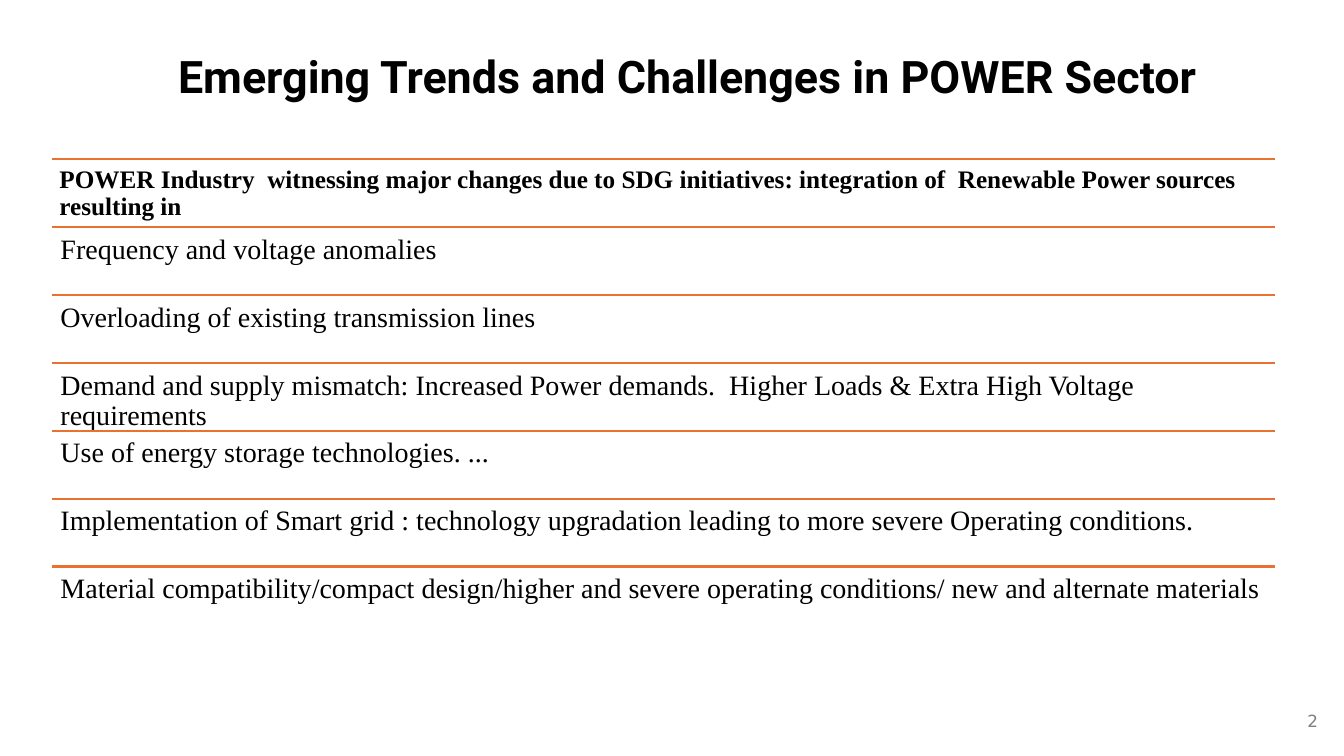
from dataclasses import dataclass

from lxml import etree
from pptx import Presentation
from pptx import util as u
from pptx.dml.color import RGBColor
from pptx.enum import shapes, text
from pptx.oxml.ns import qn


@dataclass(frozen=True)
class Theme:
    ink: RGBColor = RGBColor(0x00, 0x00, 0x00)
    rule: RGBColor = RGBColor(0xE9, 0x71, 0x31)
    muted: RGBColor = RGBColor(0x7F, 0x7F, 0x7F)
    title_size: int = 32
    lead_size: int = 18
    trend_size: int = 20
    number_size: int = 12
    title_font: str = "Roboto"
    body_font: str = "Times New Roman"
    number_font: str = "DejaVu Sans"


theme = Theme()


def place(shape, left, top, width, height):
    box = {"left": left, "top": top, "width": width, "height": height}
    for name, value in box.items():
        setattr(shape, name, u.Inches(value))


def write(shape, words, font, size, color, bold=False, spacing=0.9,
          align=text.PP_ALIGN.LEFT, anchor=text.MSO_ANCHOR.TOP, insets=(0.1, 0.05)):
    frame = shape.text_frame
    frame.text = words
    side, end = (u.Inches(inset) for inset in insets)
    paragraph = frame.paragraphs[0]
    run = paragraph.runs[0]
    formats = (
        (frame, {"word_wrap": True, "auto_size": text.MSO_AUTO_SIZE.NONE,
                 "vertical_anchor": anchor, "margin_left": side, "margin_right": side,
                 "margin_top": end, "margin_bottom": end}),
        (paragraph, {"alignment": align, "line_spacing": spacing}),
        (run.font, {"name": font, "size": u.Pt(size), "bold": bold}),
        (run.font.color, {"rgb": color}),
    )
    for target, values in formats:
        for name, value in values.items():
            setattr(target, name, value)


deck = Presentation()
deck.slide_width, deck.slide_height = u.Inches(13.33), u.Inches(7.5)
slide = deck.slides.add_slide(deck.slide_layouts[5])

heading = slide.shapes.title
place(heading, 0.52, 0.13, 12.6, 1.31)
write(heading, "Emerging Trends and Challenges in POWER Sector", theme.title_font,
      theme.title_size, theme.ink, bold=True, align=text.PP_ALIGN.CENTER,
      anchor=text.MSO_ANCHOR.MIDDLE)

trends = [
    "POWER Industry  witnessing major changes due to SDG initiatives: integration of  Renewable Power sources resulting in",
    "Frequency and voltage anomalies",
    "Overloading of existing transmission lines",
    "Demand and supply mismatch: Increased Power demands.  Higher Loads & Extra High Voltage requirements",
    "Use of energy storage technologies. ...",
    "Implementation of Smart grid : technology upgradation leading to more severe Operating conditions.",
    "Material compatibility/compact design/higher and severe operating conditions/ new and alternate materials",
]
left, width = 0.52, 12.13
first_top, last_top = 1.58, 5.62
pitch = (last_top - first_top) / (len(trends) - 1)

trend_list = slide.shapes.add_group_shape()
for row, trend in enumerate(trends):
    top = first_top + row * pitch
    divider = trend_list.shapes.add_connector(
        shapes.MSO_CONNECTOR.STRAIGHT, u.Inches(left), u.Inches(top),
        u.Inches(left + width), u.Inches(top))
    divider.line.color.rgb = theme.rule
    divider.line.width = u.Pt(1.5)
    etree.SubElement(divider._element.spPr, qn("a:effectLst"))

    is_lead = row == 0
    inset = 0.07 if is_lead else 0.08
    entry = trend_list.shapes.add_textbox(
        u.Inches(left), u.Inches(top), u.Inches(width), u.Inches(pitch))
    write(entry, trend, theme.body_font, theme.lead_size if is_lead else theme.trend_size,
          theme.ink, bold=is_lead, insets=(inset, inset))

page_number = slide.shapes.add_textbox(
    u.Inches(12.65), u.Inches(6.96), u.Inches(0.52), u.Inches(0.39))
write(page_number, "2", theme.number_font, theme.number_size, theme.muted, spacing=1.0,
      align=text.PP_ALIGN.RIGHT, anchor=text.MSO_ANCHOR.MIDDLE)

deck.save("out.pptx")
